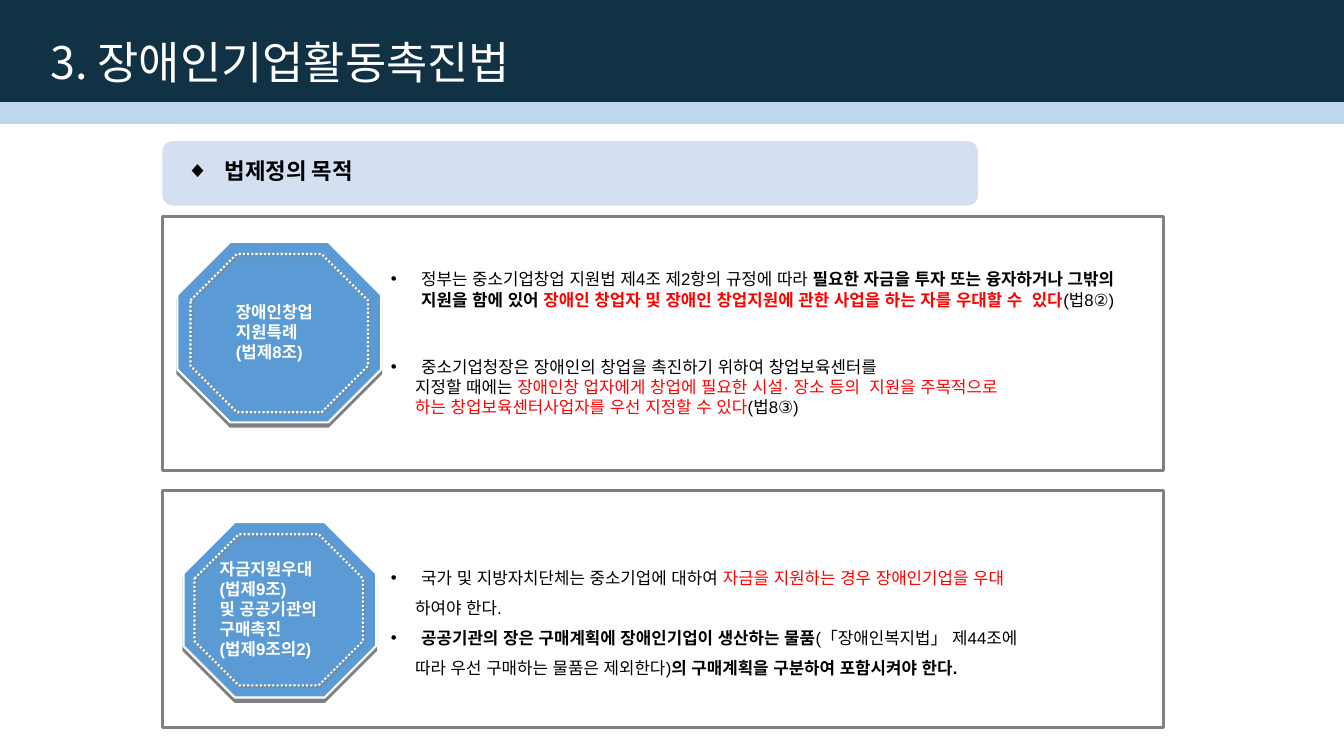
from lxml.etree import SubElement
from pptx import Presentation
from pptx.dml.color import RGBColor
from pptx.enum.dml import MSO_LINE
from pptx.enum.shapes import MSO_SHAPE
from pptx.enum.text import MSO_ANCHOR, MSO_AUTO_SIZE
from pptx.oxml.ns import qn
from pptx.util import Inches, Pt

NAVY = RGBColor(0x11, 0x32, 0x45)
SKY = RGBColor(0xBD, 0xD7, 0xEE)
PALE = RGBColor(0xB4, 0xC7, 0xE7)
BLUE = RGBColor(0x5B, 0x9B, 0xD5)
GRAY = RGBColor(0x80, 0x80, 0x80)
WHITE = RGBColor(0xFF, 0xFF, 0xFF)
BLACK = RGBColor(0, 0, 0)
RED = RGBColor(0xFF, 0, 0)

# Run formats
HEAD_FONT, BODY_FONT = "Noto Sans CJK KR", "Arial"
TITLE = dict(size=Pt(32), name=HEAD_FONT, color=WHITE)
HEADING = dict(size=Pt(16), name=HEAD_FONT, color=BLACK, bold=True)
BODY = dict(size=Pt(12), name=BODY_FONT, color=BLACK)
STRONG = BODY | dict(bold=True)
ACCENT = BODY | dict(color=RED)
STRONG_ACCENT = ACCENT | dict(bold=True)
LABEL = STRONG | dict(color=WHITE)

# Content: a paragraph is (bullet, runs)
BULLET, DIAMOND = "•", "◆"
TITLE_TEXT = [(None, [("3. 장애인기업활동촉진법", TITLE)])]
HEADING_TEXT = [(DIAMOND, [("법제정의 목적", HEADING)])]
STARTUP = [
    (BULLET, [
        ("정부는 중소기업창업 지원법 제4조 제2항의 규정에 따라 ", BODY),
        ("필요한 자금을 투자 또는 융자하거나 그밖의 지원을 함에 있어 ", STRONG),
        ("장애인 창업자 및 장애인 창업지원에 관한 사업을 하는 자를 우대할 수  있다",
         STRONG_ACCENT),
        ("(법8②)", BODY)]),
]
INCUBATOR = [
    (BULLET, [("중소기업청장은 장애인의 창업을 촉진하기 위하여 창업보육센터를", BODY)]),
    (None, [("지정할 때에는 ", BODY),
            ("장애인창 업자에게 창업에 필요한 시설· 장소 등의  지원을 주목적으로", ACCENT)]),
    (None, [("하는 창업보육센터사업자를 우선 지정할 수 있다", ACCENT), ("(법8③)", BODY)]),
]
FUNDING = [
    (BULLET, [("국가 및 지방자치단체는 중소기업에 대하여 ", BODY),
              ("자금을 지원하는 경우 장애인기업을 우대", ACCENT)]),
    (None, [("하여야 한다.", BODY)]),
    (BULLET, [("공공기관의 장은 구매계획에 장애인기업이 생산하는 물품", STRONG),
              ("(「장애인복지법」 제44조에", BODY)]),
    (None, [("따라 우선 구매하는 물품은 제외한다)", BODY),
            ("의 구매계획을 구분하여 포함시켜야 한다.", STRONG)]),
]
# Boxes are left, top, width, height in inches
PANELS = [
    dict(frame=(1.61, 2.15, 9.93, 2.52), badge=(1.76, 2.4, 2.02, 1.79),
         ring=(1.89, 2.52, 1.76, 1.57), label_box=(2.24, 2.94, 1.16, 0.71),
         label=["장애인창업", "지원특례", "(법제8조)"],
         texts=[((3.78, 2.62, 7.53, 0.71), STARTUP, 1),
                ((3.78, 3.49, 7.94, 0.71), INCUBATOR, 1)]),
    dict(frame=(1.61, 4.87, 9.93, 2.35), badge=(1.82, 5.18, 1.91, 1.74),
         ring=(1.93, 5.3, 1.67, 1.5), label_box=(2.08, 5.49, 1.67, 1.11),
         label=["자금지원우대", "(법제9조)", "및 공공기관의", "구매촉진", "(법제9조의2)"],
         texts=[((3.78, 5.48, 7.94, 1.31), FUNDING, 1.5)]),
]

prs = Presentation()
prs.slide_width, prs.slide_height = Inches(13.33), Inches(7.5)
s = prs.slides.add_slide(prs.slide_layouts[6])


def add_shadow(effects, color, dist, angle):
    shadow = SubElement(effects, qn("a:outerShdw"), dist=str(Pt(dist)),
                        dir=str(angle * 60000), algn="ctr", rotWithShape="0")
    SubElement(shadow, qn("a:srgbClr"), val=str(color))


def add_box(kind, box, fill=None, alpha=None, line=None, width=1.5,
            dash=None, adj=None, shadow=None):
    sp = s.shapes.add_shape(kind, *map(Inches, box))
    if adj is not None:
        sp.adjustments[0] = adj
    if fill is None:
        sp.fill.background()
    else:
        sp.fill.solid()
        sp.fill.fore_color.rgb = fill
    if alpha:
        color = sp._element.spPr.find(qn("a:solidFill"))[0]
        SubElement(color, qn("a:alpha"), val=str(alpha * 1000))
    if line is None:
        sp.line.fill.background()
    else:
        sp.line.color.rgb = line
        sp.line.width = Pt(width)
        if dash:
            sp.line.dash_style = dash
    sp.shadow.inherit = False
    if shadow:
        add_shadow(sp._element.spPr.find(qn("a:effectLst")), GRAY, *shadow)


def add_run(p, text, fmt, shadow):
    r = p.add_run()
    r.text = text
    for key, value in fmt.items():
        if key == "color":
            r.font.color.rgb = value
        else:
            setattr(r.font, key, value)
    rPr = r._r.get_or_add_rPr()
    latin = rPr.find(qn("a:latin"))
    SubElement(rPr, qn("a:ea"), typeface=fmt["name"])
    if shadow:
        effects = SubElement(rPr, qn("a:effectLst"))
        latin.addprevious(effects)
        add_shadow(effects, BLACK, 1.4, 45)


def add_text(box, paragraphs, spacing=1, indent=0.3, hang=0.0, wrap=True,
             anchor=MSO_ANCHOR.TOP, grow=True, shadow=False):
    tf = s.shapes.add_textbox(*map(Inches, box)).text_frame
    tf.word_wrap = wrap
    tf.vertical_anchor = anchor
    tf.auto_size = MSO_AUTO_SIZE.SHAPE_TO_FIT_TEXT if grow else MSO_AUTO_SIZE.NONE
    for i, (bullet, runs) in enumerate(paragraphs):
        p = tf.paragraphs[0] if i == 0 else tf.add_paragraph()
        p.line_spacing = spacing
        pPr = p._p.get_or_add_pPr()
        if bullet:
            pPr.set("marL", str(Inches(indent)))
            pPr.set("indent", str(-Inches(indent)))
            SubElement(pPr, qn("a:buFont"), typeface="Arial")
            SubElement(pPr, qn("a:buChar"), char=bullet)
        else:
            pPr.set("marL", str(Inches(hang)))
        for text, fmt in runs:
            add_run(p, text, fmt, shadow)


# Title band
add_box(MSO_SHAPE.RECTANGLE, (0, 1, 13.33, 0.23), SKY)
add_box(MSO_SHAPE.RECTANGLE, (0, 0, 13.33, 1.01), NAVY)
add_text((0.4, 0.12, 8.94, 1.05), TITLE_TEXT, 0.9, anchor=MSO_ANCHOR.MIDDLE, grow=False)

# Section heading
add_box(MSO_SHAPE.ROUNDED_RECTANGLE, (1.61, 1.4, 8.09, 0.64), PALE, alpha=56)
add_text((1.75, 1.54, 8, 0.35), HEADING_TEXT, 0.9, indent=0.38, grow=False)

# Panels with octagon badges
for panel in PANELS:
    add_box(MSO_SHAPE.ROUNDED_RECTANGLE, panel["frame"], WHITE, alpha=50,
            line=GRAY, width=2.25, adj=0)
    add_box(MSO_SHAPE.OCTAGON, panel["badge"], BLUE, line=WHITE, adj=0.293,
            shadow=(3, 90))
    add_box(MSO_SHAPE.OCTAGON, panel["ring"], line=WHITE, adj=0.293,
            dash=MSO_LINE.ROUND_DOT, shadow=(1.4, 45))
    label = [(None, [(line, LABEL)]) for line in panel["label"]]
    add_text(panel["label_box"], label, shadow=True)
    for box, paragraphs, spacing in panel["texts"]:
        add_text(box, paragraphs, spacing, hang=0.24)

prs.save("out.pptx")
